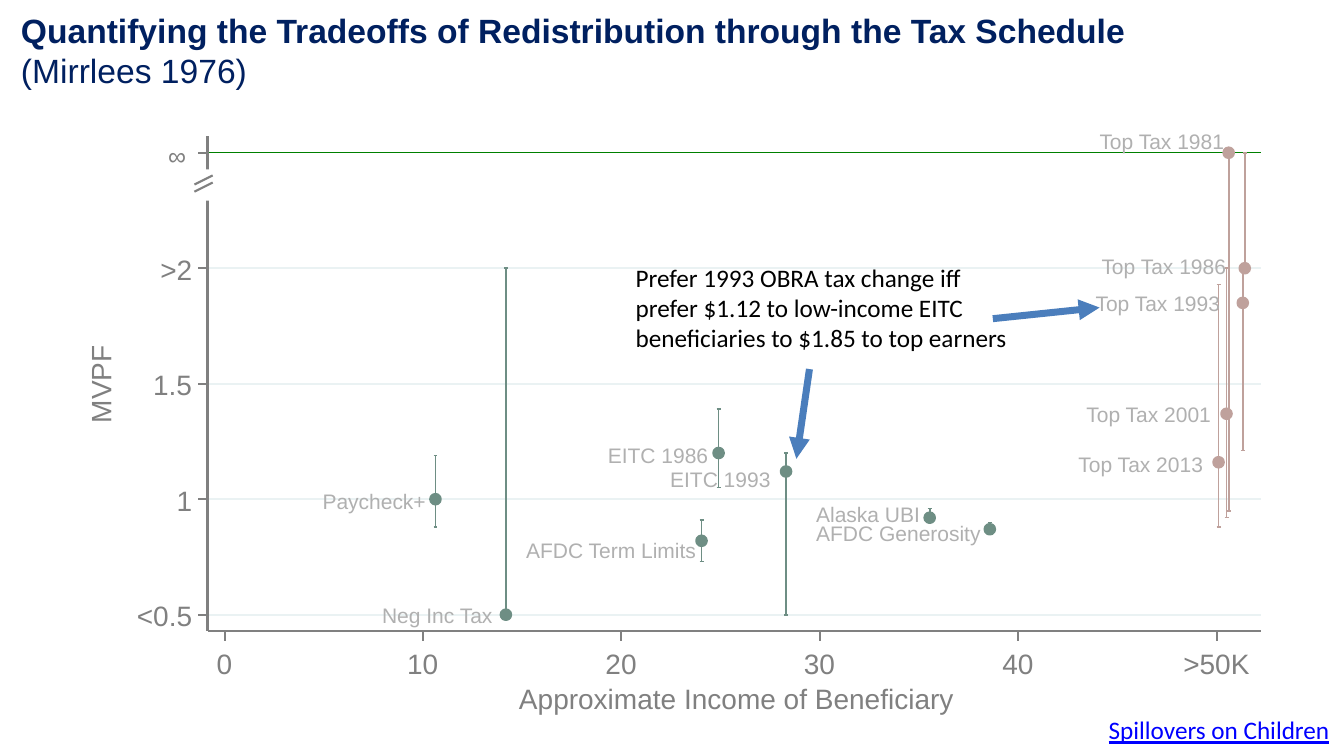
"""Build the slide on tax schedule tradeoffs, with MVPF estimates plotted by beneficiary income."""
from lxml import etree
from pptx import Presentation
from pptx.dml.color import RGBColor as RGB
from pptx.enum.shapes import MSO_CONNECTOR as CONN, MSO_SHAPE as SHAPE
from pptx.enum.text import MSO_AUTO_SIZE as AUTO
from pptx.oxml.ns import qn
from pptx.util import Cm, Pt

COLORS = {"title": "002060", "axis": "808080", "label": "B0B0B0", "grid": "EAF2F3",
          "infinity": "008000", "transfer": "6E8E84", "top_tax": "BFA19C",
          "arrow": "4B7EBC", "link": "0000FF", "black": "000000", "white": "FFFFFF"}

prs = Presentation()
prs.slide_width, prs.slide_height = Cm(33.87), Cm(19.05)
s = prs.slides.add_slide(prs.slide_layouts[6])


def add_line(x1, y1, x2, y2, color, width, arrow=False):
    c = s.shapes.add_connector(CONN.STRAIGHT, Cm(x1), Cm(y1), Cm(x2), Cm(y2))
    c.line.color.rgb = RGB.from_string(COLORS[color])
    c.line.width = Pt(width)
    if arrow:
        etree.SubElement(c.line._get_or_add_ln(), qn("a:tailEnd"), type="triangle")
    etree.SubElement(c._element.spPr, qn("a:effectLst"))


def add_text(text, left, top, width, height, size, color, font="Arial", wrap=False, inset=True):
    sp = s.shapes.add_textbox(Cm(left), Cm(top), Cm(width), Cm(height))
    tf = sp.text_frame
    tf.word_wrap = wrap
    tf.auto_size = AUTO.SHAPE_TO_FIT_TEXT
    if not inset:
        tf.margin_left = tf.margin_right = tf.margin_top = tf.margin_bottom = 0
    p = tf.paragraphs[0]
    p.add_run().text = text
    p.font.name, p.font.size = font, Pt(size)
    p.font.color.rgb = RGB.from_string(COLORS[color])
    return sp


LEFT, RIGHT, TOP, BOTTOM = 5.23, 31.78, 3.43, 15.9
X_ZERO, X_UNIT = 5.66, 0.5
Y_HALF, Y_UNIT = 15.49, 5.82
INFINITY = 2.5
CAP, DOT, TICK = 0.05, 0.23, 0.25

# label, income, MVPF, low, high, label left, label top, label width
transfers = [
    ("Paycheck+", 10.63, 1, 0.88, 1.19, 8.13, 12.32, 2.95),
    ("Neg Inc Tax", 14.18, 0.5, 0.5, 2, 9.63, 15.19, 3.23),
    ("AFDC Term Limits", 24.04, 0.82, 0.73, 0.91, 13.26, 13.54, 4.85),
    ("EITC 1986", 24.9, 1.2, 1.05, 1.39, 15.32, 11.15, 2.87),
    ("EITC 1993", 28.3, 1.12, 0.5, 1.2, 16.89, 11.76, 2.87),
    ("Alaska UBI", 35.54, 0.92, 0.9, 0.96, 20.57, 12.65, 3),
    ("AFDC Generosity", 38.57, 0.87, 0.85, 0.9, 20.57, 13.11, 4.6),
]
top_taxes = [
    ("Top Tax 2013", 50.1, 1.16, 0.88, 1.93, 27.18, 11.38, 3.63),
    ("Top Tax 2001", 50.5, 1.37, 0.92, 2, 27.38, 10.13, 3.63),
    ("Top Tax 1981", 50.61, INFINITY, 0.95, INFINITY, 27.71, 3.25, 3.63),
    ("Top Tax 1993", 51.32, 1.85, 1.21, 2, 27.61, 7.32, 3.63),
    ("Top Tax 1986", 51.42, 2, 2, INFINITY, 27.76, 6.4, 3.63),
]
policies = [("transfer", row) for row in transfers] + [("top_tax", row) for row in top_taxes]

levels = [Y_HALF - Y_UNIT * 0.5 * i for i in range(5)]
for y in levels[:-1]:
    add_line(LEFT, y, RIGHT, y, "grid", 1.5)
add_line(LEFT, levels[-1], RIGHT, levels[-1], "infinity", 0.75)

for color, (_, income, _, low, high, *_) in policies:
    x = X_ZERO + X_UNIT * income
    y_low, y_high = (Y_HALF - Y_UNIT * (v - 0.5) for v in (low, high))
    add_line(x, y_low, x, y_high, color, 1.13)
    for y in (y_high, y_low):
        add_line(x - CAP, y, x + CAP, y, color, 1.13)

for color, (label, income, mvpf, _, _, left, top, width) in policies:
    x = X_ZERO + X_UNIT * income
    y = Y_HALF - Y_UNIT * (mvpf - 0.5)
    dot = s.shapes.add_shape(SHAPE.OVAL, Cm(x - DOT / 2), Cm(y - DOT / 2), Cm(DOT), Cm(DOT))
    dot.shadow.inherit = False
    dot.fill.solid()
    dot.fill.fore_color.rgb = dot.line.color.rgb = RGB.from_string(COLORS[color])
    dot.line.width = Pt(2.5)
    add_text(label, left, top, width, 0.76, 15, "label", inset=False)

add_line(LEFT, BOTTOM, LEFT, TOP, "axis", 1.5)
for y in levels:
    add_line(LEFT, y, LEFT - TICK, y, "axis", 1.5)
y_labels = [("<0.5", 3.45, 1.73), ("1", 4.45, 0.71), ("1.5", 3.86, 1.32), (">2", 4.04, 1.12)]
for y, (label, left, width) in zip(levels, y_labels):
    add_text(label, left, y - 0.4, width, 0.99, 20, "axis", inset=False)
add_text("∞", 4.24, 3.53, 0.46, 0.76, 18, "axis", inset=False)
add_text("MVPF", 1.45, 9.02, 2.29, 0.99, 20, "axis", inset=False).rotation = 270

add_line(LEFT, BOTTOM, RIGHT, BOTTOM, "axis", 1.5)
x_labels = [("0", 0.2, 0.71), ("10", 0.4, 1.12), ("20", 0.4, 1.12),
            ("30", 0.4, 1.12), ("40", 0.4, 1.12), (">50K", 0.84, 1.98)]
for i, (label, offset, width) in enumerate(x_labels):
    x = X_ZERO + X_UNIT * 10 * i
    add_line(x, BOTTOM, x, BOTTOM + TICK, "axis", 1.5)
    add_text(label, x - offset, 16.28, width, 0.99, 20, "axis", inset=False)
add_text("Approximate Income of Beneficiary", 13.08, 17.17, 11.38, 0.99, 20, "axis", inset=False)

gap = s.shapes.add_shape(SHAPE.RECTANGLE, Cm(4.42), Cm(4.27), Cm(1.47), Cm(0.79))
gap.shadow.inherit = False
gap.fill.solid()
gap.fill.fore_color.rgb = RGB.from_string(COLORS["white"])
gap.line.fill.background()
for y in (4.65, 4.83):
    add_line(4.9, y, 5.36, y - 0.23, "axis", 1.5)

add_text("Prefer 1993 OBRA tax change iff prefer $1.12 to low-income EITC "
         "beneficiaries to $1.85 to top earners",
         15.77, 6.48, 10.21, 2.57, 18, "black", "Calibri", wrap=True)
add_line(25.02, 8.03, 27.71, 7.75, "arrow", 5, arrow=True)
add_line(20.4, 9.3, 20.07, 11.56, "arrow", 5, arrow=True)

title = add_text("Quantifying the Tradeoffs of Redistribution through the Tax Schedule ",
                 0.53, 0.25, 29.51, 2.06, 24, "title", wrap=True, inset=False)
p = title.text_frame.paragraphs[0]
p.runs[0].font.bold = True
r = p.add_run()
r.text = "(Mirrlees 1976)"
r.font.bold = False

link = add_text("Spillovers on Children", 27.69, 17.88, 6.15, 1.02, 18, "link", "Calibri")
link.text_frame.paragraphs[0].font.underline = True

prs.save("out.pptx")
